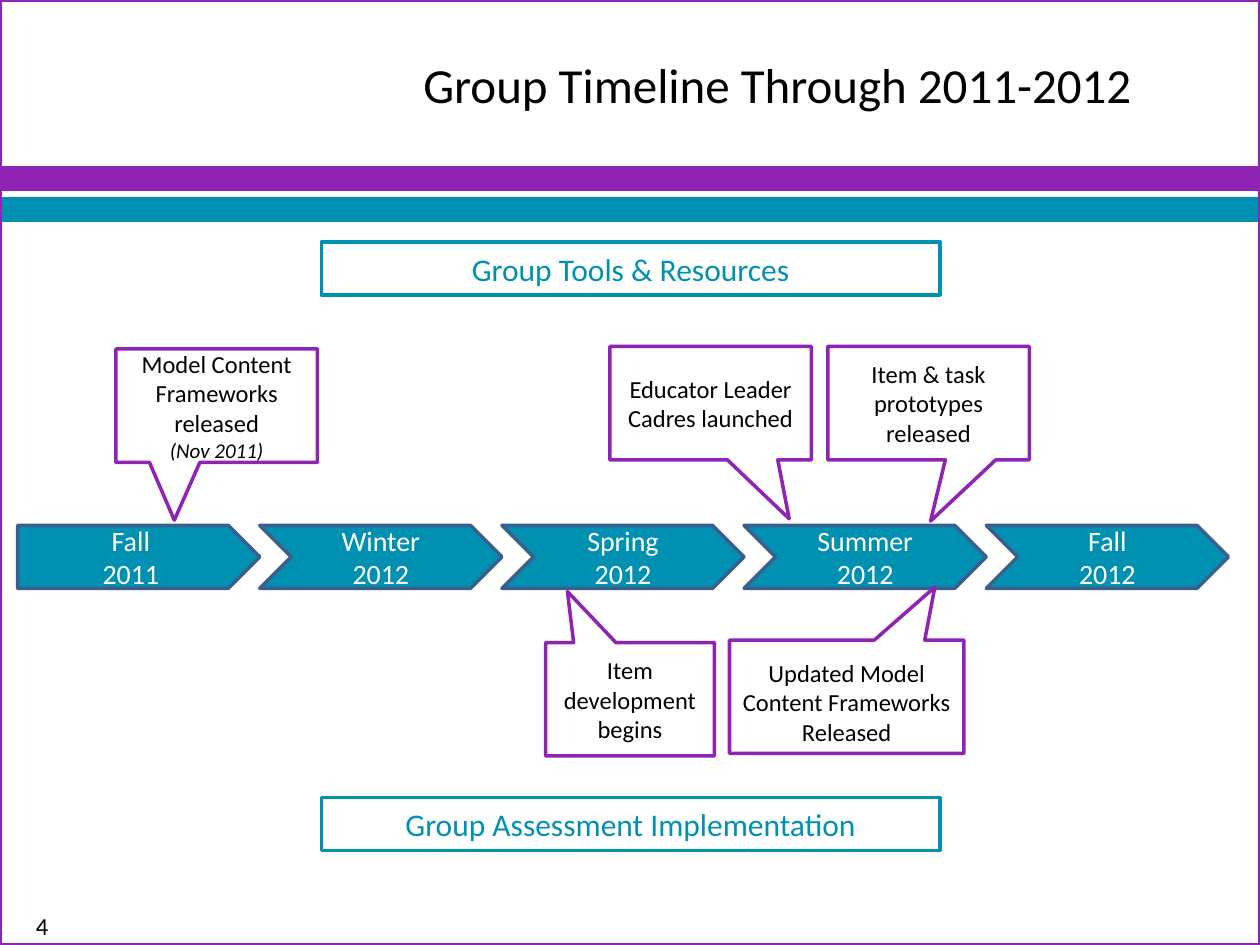
import pptx
import pptx.util
import pptx.dml.color
import pptx.enum.shapes
import pptx.enum.text

Inches = pptx.util.Inches
Pt = pptx.util.Pt
Shape = pptx.enum.shapes.MSO_SHAPE
Align = pptx.enum.text.PP_ALIGN
Anchor = pptx.enum.text.MSO_ANCHOR

FONT = "Calibri"
COLORS = {
    "purple": "8F23B3",
    "teal": "0091B2",
    "navy": "3A5F8C",
    "black": "000000",
    "white": "FFFFFF",
}

TIMELINE_LEFT = 0.14
TIMELINE_RIGHT = 9.75
SEASONS = [("Fall", "2011"), ("Winter", "2012"), ("Spring", "2012"),
           ("Summer", "2012"), ("Fall", "2012")]

CALLOUTS = [
    (0.92, 2.77, 1.6, (-0.21, 1.01), ["Model Content Frameworks released", "(Nov 2011)"]),
    (4.84, 2.75, 1.6, (0.39, 1.02), ["Educator Leader Cadres launched"]),
    (6.57, 2.75, 1.6, (0.01, 1.04), ["Item & task prototypes released"]),
    (4.33, 5.1, 1.34, (-0.37, -0.95), ["Item development begins"]),
]
BANNERS = [(1.92, "Group Tools & Resources"), (6.33, "Group Assessment Implementation")]


def color(name):
    return pptx.dml.color.RGBColor.from_string(COLORS[name])


def style_shape(shape, line, width=2, fill=None):
    shape.shadow.inherit = False
    if fill:
        shape.fill.solid()
        shape.fill.fore_color.rgb = color(fill)
    else:
        shape.fill.background()
    shape.line.color.rgb = color(line)
    shape.line.width = Pt(width)


def write_text(shape, lines, size, ink="black", align=Align.CENTER, anchor=Anchor.MIDDLE,
               insets=(0.1, 0.05, 0.1, 0.05)):
    frame = shape.text_frame
    frame.word_wrap = True
    frame.vertical_anchor = anchor
    frame.margin_left, frame.margin_top, frame.margin_right, frame.margin_bottom = map(Inches, insets)
    frame.text = "\n".join(lines)
    for para in frame.paragraphs:
        para.alignment = align
        para.font.name = FONT
        para.font.size = Pt(size)
        para.font.color.rgb = color(ink)


def add_block(page, kind, left, top, width, height, line, line_width=2, fill=None):
    shape = page.shapes.add_shape(kind, Inches(left), Inches(top), Inches(width), Inches(height))
    style_shape(shape, line, line_width, fill)
    return shape


def add_label(page, left, top, width, height, text, size, **options):
    box = page.shapes.add_textbox(Inches(left), Inches(top), Inches(width), Inches(height))
    write_text(box, [text], size, **options)


def add_page_frame(page):
    for top, name in ((1.33, "purple"), (1.58, "teal")):
        add_block(page, Shape.RECTANGLE, 0, top, 10, 0.17, name, fill=name)
    add_block(page, Shape.RECTANGLE, 0, 0, 10, 7.5, "purple", 2.25)


def add_timeline(page):
    width = (TIMELINE_RIGHT - TIMELINE_LEFT) / len(SEASONS)
    for index, season in enumerate(SEASONS):
        kind = Shape.CHEVRON if index else Shape.PENTAGON
        step = add_block(page, kind, TIMELINE_LEFT + index * width, 4.17, width, 0.5,
                         "navy", fill="teal")
        write_text(step, season, 16, "white", insets=(0, 0, 0, 0))


def add_banner(page, top, text):
    banner = add_block(page, Shape.RECTANGLE, 2.55, top, 4.91, 0.42, "teal")
    write_text(banner, [text], 18, "teal")


def add_callout(page, left, top, width, tip, lines):
    callout = add_block(page, Shape.RECTANGULAR_CALLOUT, left, top, width, 0.9, "purple")
    callout.adjustments[0], callout.adjustments[1] = tip
    write_text(callout, lines, 14)
    for note in callout.text_frame.paragraphs[1:]:
        note.font.size = Pt(12)
        note.font.italic = True


def add_update_callout(page):
    outline = [(5.79, 5.08), (6.94, 5.08), (7.42, 4.66), (7.34, 5.08),
               (7.65, 5.08), (7.65, 5.98), (5.79, 5.98)]
    points = [(Inches(x), Inches(y)) for x, y in outline]
    builder = page.shapes.build_freeform(*points[0])
    builder.add_line_segments(points[1:], close=True)
    callout = builder.convert_to_shape()
    style_shape(callout, "purple")
    write_text(callout, ["Updated Model Content Frameworks Released"], 14,
               insets=(0.05, 0.5, 0.05, 0))


def main():
    deck = pptx.Presentation()
    deck.slide_width = Inches(10)
    deck.slide_height = Inches(7.5)
    page = deck.slides.add_slide(deck.slide_layouts[6])
    add_page_frame(page)
    add_label(page, 3.08, 0, 6.92, 1.33, "Group Timeline Through 2011-2012", 28,
              align=Align.LEFT, insets=(0.28, 0.05, 0.1, 0.05))
    add_timeline(page)
    for banner in BANNERS:
        add_banner(page, *banner)
    for callout in CALLOUTS:
        add_callout(page, *callout)
    add_update_callout(page)
    add_label(page, 0, 7.18, 0.67, 0.32, "4", 14, anchor=Anchor.TOP)
    deck.save("out.pptx")


if __name__ == "__main__":
    main()
